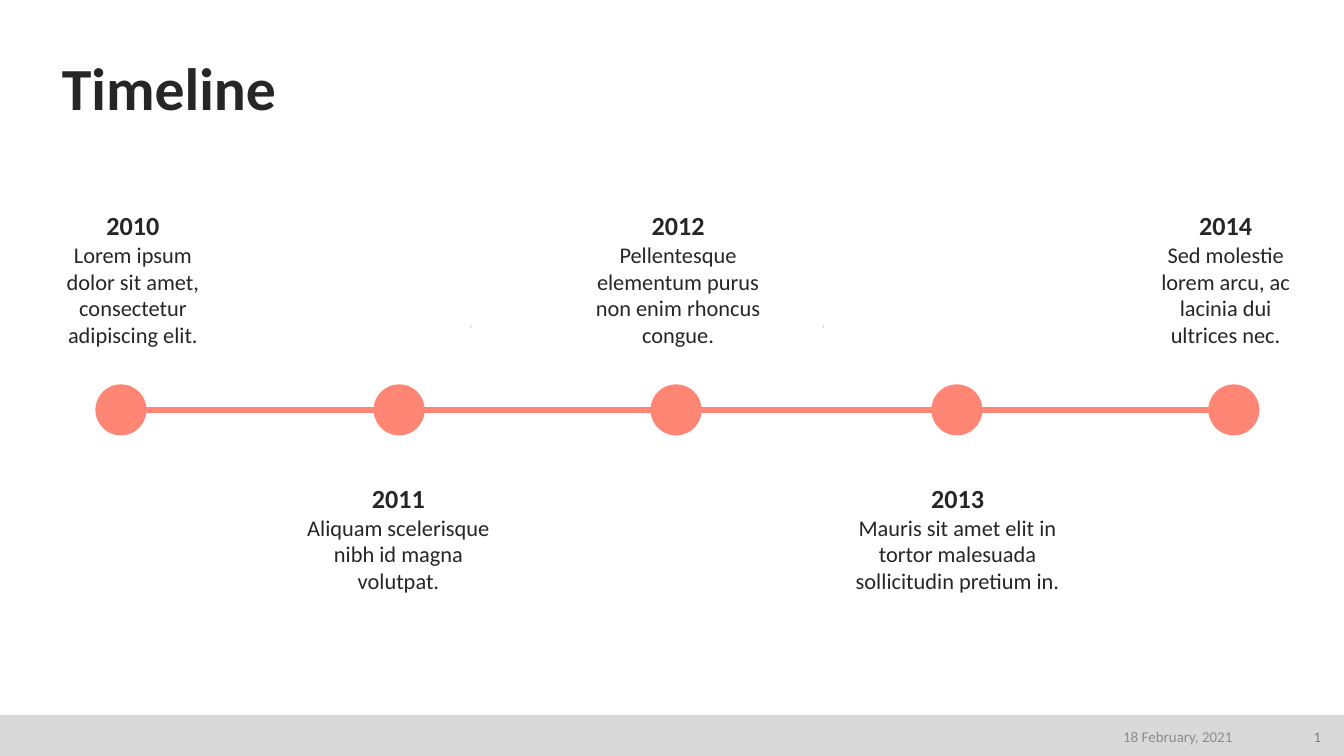
from dataclasses import dataclass

from lxml import etree
from pptx import Presentation
from pptx.dml.color import RGBColor
from pptx.enum import shapes, text
from pptx.oxml import ns
from pptx.util import Inches, Pt


@dataclass(frozen=True)
class Theme:
    font: str = "Calibri"
    ink: str = "262626"
    accent: str = "FF8674"
    band: str = "D9D9D9"
    date: str = "8C8C8C"
    number: str = "808080"
    title_size: int = 32
    year_size: int = 14
    body_size: int = 12
    footer_size: int = 8
    line_width: float = 3.4


class SlideBuilder:
    def __init__(self, slide, theme):
        self.slide = slide
        self.theme = theme

    def style(self, p, size, color, bold=False, align=None):
        p.alignment = align
        p.font.name = self.theme.font
        p.font.size = Pt(size)
        p.font.bold = bold
        p.font.color.rgb = RGBColor.from_string(color)

    def title(self, words, x, y, w, h):
        sp = self.slide.shapes.title
        sp.left, sp.top, sp.width, sp.height = map(Inches, (x, y, w, h))
        tf = sp.text_frame
        tf.margin_left = tf.margin_right = tf.margin_top = tf.margin_bottom = 0
        tf.vertical_anchor = text.MSO_ANCHOR.BOTTOM
        tf.text = words
        p = tf.paragraphs[0]
        p.line_spacing = 0.9
        self.style(p, self.theme.title_size, self.theme.ink, True, text.PP_ALIGN.LEFT)

    def shape(self, kind, x, y, w, h, color):
        sp = self.slide.shapes.add_shape(kind, *map(Inches, (x, y, w, h)))
        sp.shadow.inherit = False
        sp.fill.solid()
        sp.fill.fore_color.rgb = RGBColor.from_string(color)
        sp.line.fill.background()

    def line(self, x1, x2, y):
        ends = map(Inches, (x1, y, x2, y))
        cn = self.slide.shapes.add_connector(shapes.MSO_CONNECTOR.STRAIGHT, *ends)
        cn.line.width = Pt(self.theme.line_width)
        cn.line.color.rgb = RGBColor.from_string(self.theme.accent)
        etree.SubElement(cn._element.spPr, ns.qn("a:effectLst"))

    def text_box(self, x, y, w, h):
        tf = self.slide.shapes.add_textbox(*map(Inches, (x, y, w, h))).text_frame
        tf.word_wrap = True
        return tf

    def event(self, year, words, x, y, w, h):
        tf = self.text_box(x, y, w, h)
        tf.auto_size = text.MSO_AUTO_SIZE.SHAPE_TO_FIT_TEXT
        tf.text = f"{year}\n{words}"
        heading, body = tf.paragraphs
        center = text.PP_ALIGN.CENTER
        self.style(heading, self.theme.year_size, self.theme.ink, True, center)
        self.style(body, self.theme.body_size, self.theme.ink, False, center)

    def footer(self, words, x, w, color):
        tf = self.text_box(x, 5.35, w, 0.26)
        tf.vertical_anchor = text.MSO_ANCHOR.MIDDLE
        tf.text = words
        self.style(tf.paragraphs[0], self.theme.footer_size, color, align=text.PP_ALIGN.RIGHT)


EVENTS = [
    ("2010", "Lorem ipsum dolor sit amet, consectetur adipiscing elit.", 0.31, 1.36, 1.14),
    ("2011", "Aliquam scelerisque nibh id magna volutpat.", 2.16, 1.61, 1.14),
    ("2012", "Pellentesque elementum purus non enim rhoncus congue.", 4.27, 1.55, 1.14),
    ("2013", "Mauris sit amet elit in tortor malesuada sollicitudin pretium in.", 6.19, 1.87, 0.94),
    ("2014", "Sed molestie lorem arcu, ac lacinia dui ultrices nec.", 8.44, 1.36, 1.14),
]
CENTERS = (0.9, 2.97, 5.03, 7.12, 9.18)
AXIS_Y, DOT = 3.05, 0.38
ROW_TOPS = (1.51, 3.54)


def main():
    prs = Presentation()
    prs.slide_width = Inches(10)
    prs.slide_height = prs.slide_width * 9 // 16
    theme = Theme()
    s = SlideBuilder(prs.slides.add_slide(prs.slide_layouts[5]), theme)
    rect, oval = shapes.MSO_SHAPE.RECTANGLE, shapes.MSO_SHAPE.OVAL

    s.shape(rect, 0, 5.32, 10, 0.31, theme.band)
    s.title("Timeline", 0.46, 0.4, 9.1, 0.52)
    for x in (3.5, 6.12):
        s.shape(rect, x, 2.42, 0.01, 0.02, theme.band)

    for start, end in zip(CENTERS, CENTERS[1:]):
        s.line(start, end, AXIS_Y)
    for x in CENTERS:
        s.shape(oval, x - DOT / 2, AXIS_Y - DOT / 2, DOT, DOT, theme.accent)
    for i, (year, words, x, w, h) in enumerate(EVENTS):
        s.event(year, words, x, ROW_TOPS[i % 2], w, h)

    s.footer("18 February, 2021", 7.02, 2.25, theme.date)
    s.footer("1", 9.56, 0.37, theme.number)
    prs.save("out.pptx")


if __name__ == "__main__":
    main()
